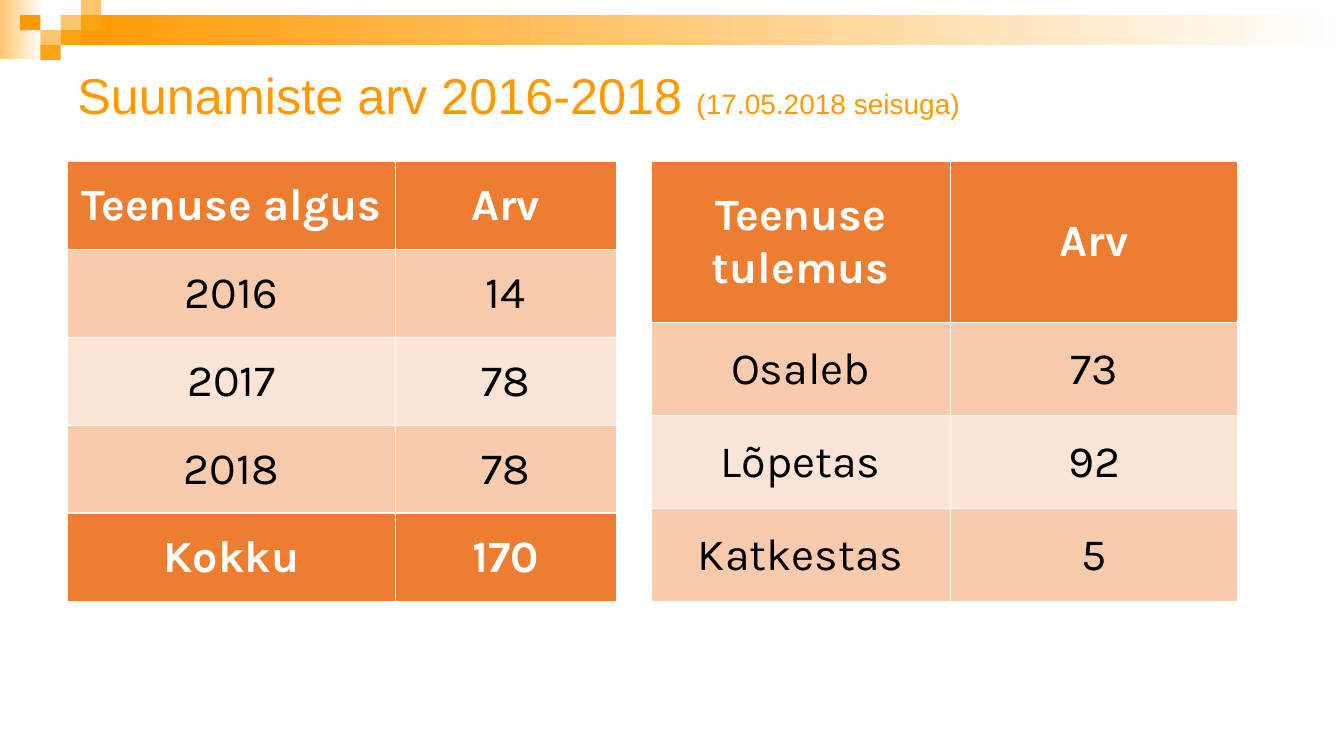
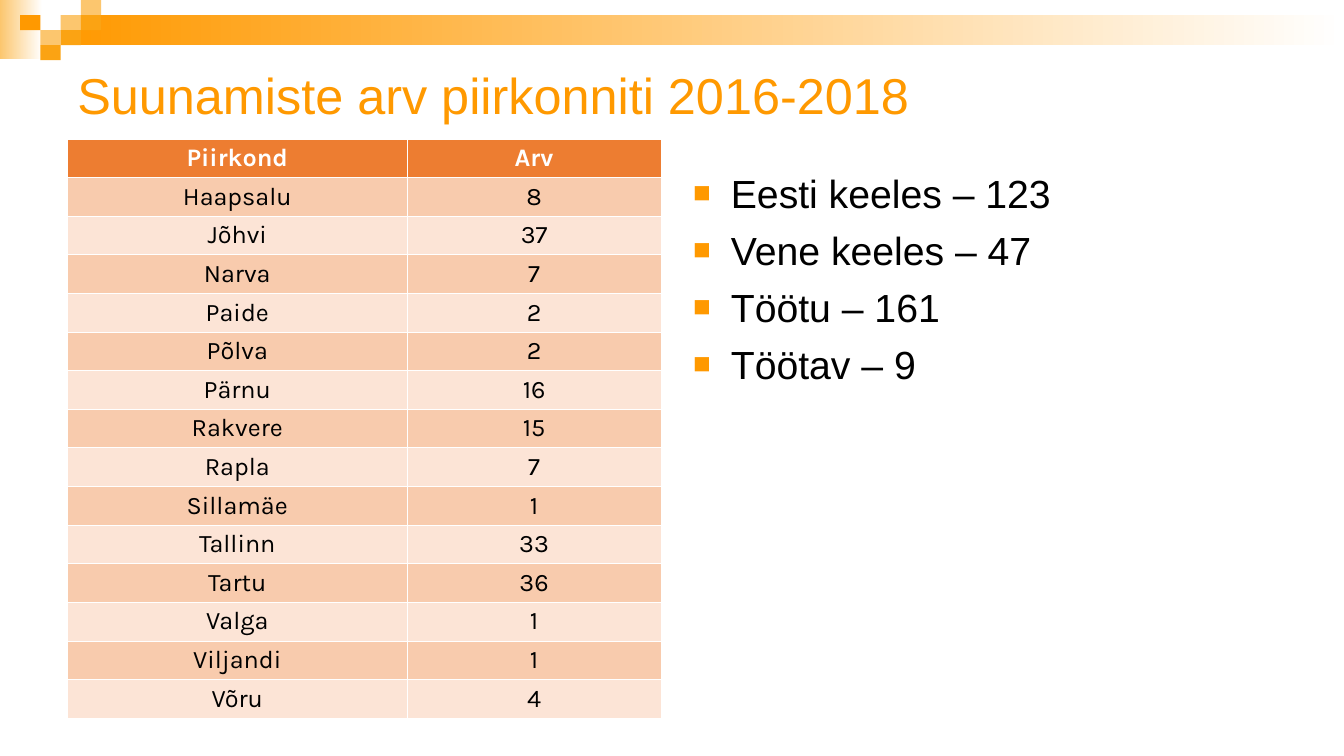
from dataclasses import dataclass

from lxml.etree import SubElement
from pptx import Presentation
from pptx.dml.color import RGBColor
from pptx.enum.shapes import MSO_SHAPE as Preset
from pptx.enum.text import MSO_ANCHOR as Anchor, PP_ALIGN as Align
from pptx.oxml.ns import qn
from pptx.shapes.autoshape import Shape
from pptx.slide import Slide
from pptx.table import _Cell as Cell
from pptx.text.text import TextFrame, _Paragraph as Paragraph
from pptx.util import Cm, Pt

# Colours and fonts
ORANGE = RGBColor(0xFF, 0x99, 0x00)
MID_ORANGE = RGBColor(0xFB, 0xA3, 0x13)
LIGHT_ORANGE = RGBColor(0xFC, 0xC6, 0x6E)
HEADER_FILL = RGBColor(0xED, 0x7D, 0x31)
ROW_FILLS = (RGBColor(0xF8, 0xCB, 0xAD), RGBColor(0xFC, 0xE4, 0xD6))
WHITE = RGBColor(0xFF, 0xFF, 0xFF)
BLACK = RGBColor(0x00, 0x00, 0x00)
TEXT_FONT = "Arial"
TABLE_FONT = "Karla"

# Shared measures, in centimetres
LEFT_MARGIN = 1.7
SQUARE_WIDTH, SQUARE_HEIGHT = 0.51, 0.38


@dataclass(frozen=True)
class Square:
    column: int
    row: int
    colour: RGBColor


@dataclass(frozen=True)
class TableSpec:
    left: float
    top: float
    height: float
    column_widths: tuple[float, ...]
    rows: tuple[tuple[str, str], ...]
    size: float
    header_height: float | None = None
    has_total: bool = False


SQUARES = (
    Square(3, 1, LIGHT_ORANGE),
    Square(4, 0, LIGHT_ORANGE),
    Square(4, 1, MID_ORANGE),
    Square(2, 2, LIGHT_ORANGE),
    Square(1, 1, ORANGE),
    Square(3, 2, MID_ORANGE),
    Square(2, 3, MID_ORANGE),
)

# Slide content
RESULTS = TableSpec(
    16.41, 4.06, 11.1, (7.54, 7.24),
    (("Teenuse tulemus", "Arv"), ("Osaleb", "73"), ("Lõpetas", "92"), ("Katkestas", "5")),
    size=32, header_height=4.07,
)
STARTS = TableSpec(
    LEFT_MARGIN, 4.06, 11.1, (8.26, 5.57),
    (("Teenuse algus", "Arv"), ("2016", "14"), ("2017", "78"), ("2018", "78"), ("Kokku", "170")),
    size=32, has_total=True,
)
REGIONS = TableSpec(
    LEFT_MARGIN, 3.5, 14.6, (8.56, 6.4),
    (
        ("Piirkond", "Arv"), ("Haapsalu", "8"), ("Jõhvi", "37"), ("Narva", "7"),
        ("Paide", "2"), ("Põlva", "2"), ("Pärnu", "16"), ("Rakvere", "15"),
        ("Rapla", "7"), ("Sillamäe", "1"), ("Tallinn", "33"), ("Tartu", "36"),
        ("Valga", "1"), ("Viljandi", "1"), ("Võru", "4"),
    ),
    size=18,
)
LANGUAGE_AND_WORK = (
    "Eesti keeles – 123", "Vene keeles – 47", "Töötu – 161", "Töötav – 9",
)


def add_text(paragraph: Paragraph, text: str, *, size: float, colour: RGBColor,
             font: str = TEXT_FONT, bold: bool = False) -> None:
    run = paragraph.add_run()
    run.text = text
    run.font.size = Pt(size)
    run.font.name = font
    run.font.bold = bold
    run.font.color.rgb = colour


def add_text_box(slide: Slide, left: float, top: float, width: float, height: float,
                 anchor: Anchor = Anchor.TOP) -> TextFrame:
    box = slide.shapes.add_textbox(Cm(left), Cm(top), Cm(width), Cm(height))
    frame = box.text_frame
    frame.word_wrap = True
    frame.vertical_anchor = anchor
    return frame


# Header decoration and title
def add_rectangle(slide: Slide, left: float, top: float, width: float, height: float) -> Shape:
    shape = slide.shapes.add_shape(Preset.RECTANGLE, Cm(left), Cm(top), Cm(width), Cm(height))
    shape.shadow.inherit = False
    shape.line.fill.background()
    return shape


def add_fading_band(slide: Slide, left: float, top: float, width: float, height: float,
                    colour: RGBColor) -> None:
    fill = add_rectangle(slide, left, top, width, height).fill
    fill.gradient()
    fill.gradient_angle = 0
    for stop, stop_colour in zip(fill.gradient_stops, (colour, WHITE)):
        stop.color.rgb = stop_colour


def add_header(slide: Slide) -> None:
    add_fading_band(slide, 0, 0, 1.07, 1.48, LIGHT_ORANGE)
    add_fading_band(slide, 1.53, 0.38, 32.34, 0.76, ORANGE)
    for square in SQUARES:
        shape = add_rectangle(slide, square.column * SQUARE_WIDTH, square.row * SQUARE_HEIGHT,
                              SQUARE_WIDTH, SQUARE_HEIGHT)
        shape.fill.solid()
        shape.fill.fore_color.rgb = square.colour


def add_title(slide: Slide, title: str, note: str = "") -> None:
    frame = add_text_box(slide, LEFT_MARGIN, 1.27, 30.48, 2.24, Anchor.MIDDLE)
    paragraph = frame.paragraphs[0]
    add_text(paragraph, title, size=36, colour=ORANGE)
    if note:
        add_text(paragraph, note, size=20, colour=ORANGE)


# Tables
def set_borders(cell: Cell, top: float, bottom: float) -> None:
    properties = cell._tc.get_or_add_tcPr()
    for side, width in (("L", 0.5), ("R", 0.5), ("T", top), ("B", bottom)):
        line = SubElement(properties, qn(f"a:ln{side}"), w=str(Pt(width)))
        fill = SubElement(line, qn("a:solidFill"))
        SubElement(fill, qn("a:srgbClr"), val=str(WHITE))


def add_data_table(slide: Slide, spec: TableSpec) -> None:
    count = len(spec.rows)
    last = count - 1
    header_height = spec.header_height or spec.height / count
    row_height = (spec.height - header_height) / last
    table = slide.shapes.add_table(
        count, len(spec.column_widths), Cm(spec.left), Cm(spec.top),
        Cm(sum(spec.column_widths)), Cm(spec.height),
    ).table
    table.first_row = table.horz_banding = False
    for column, width in zip(table.columns, spec.column_widths):
        column.width = Cm(width)
    for index, values in enumerate(spec.rows):
        table.rows[index].height = Cm(row_height if index else header_height)
        strong = index == 0 or (spec.has_total and index == last)
        top = 1.5 if spec.has_total and index == last else 0.5
        bottom = 1.5 if spec.has_total and index == last - 1 else 0.5
        for cell, text in zip(table.rows[index].cells, values):
            cell.margin_left = cell.margin_right = cell.margin_top = cell.margin_bottom = 0
            cell.vertical_anchor = Anchor.MIDDLE
            set_borders(cell, top, bottom)
            cell.fill.solid()
            cell.fill.fore_color.rgb = HEADER_FILL if strong else ROW_FILLS[(index - 1) % 2]
            paragraph = cell.text_frame.paragraphs[0]
            paragraph.alignment = Align.CENTER
            add_text(paragraph, text, size=spec.size, font=TABLE_FONT, bold=strong,
                     colour=WHITE if strong else BLACK)


# Bulleted list
def add_bullet(paragraph: Paragraph) -> None:
    properties = paragraph._p.get_or_add_pPr()
    properties.set("marL", str(Cm(0.95)))
    properties.set("indent", str(-Cm(0.95)))
    colour = SubElement(properties, qn("a:buClr"))
    SubElement(colour, qn("a:srgbClr"), val=str(ORANGE))
    SubElement(properties, qn("a:buSzPct"), val="75000")
    SubElement(properties, qn("a:buFont"), typeface=TEXT_FONT)
    SubElement(properties, qn("a:buChar"), char="■")


def add_bullet_list(slide: Slide, items: tuple[str, ...]) -> None:
    frame = add_text_box(slide, 17.22, 4.14, 14.96, 12.24)
    for index, item in enumerate(items):
        paragraph = frame.add_paragraph() if index else frame.paragraphs[0]
        add_bullet(paragraph)
        if index:
            paragraph.space_before = Pt(7)
        add_text(paragraph, item, size=28, colour=BLACK)


def add_slide(presentation: Presentation, title: str, note: str = "") -> Slide:
    slide = presentation.slides.add_slide(presentation.slide_layouts[6])
    add_header(slide)
    add_title(slide, title, note)
    return slide


def main() -> None:
    presentation = Presentation()
    presentation.slide_width = Cm(33.87)
    presentation.slide_height = Cm(19.05)

    # Referrals by year and by result
    slide = add_slide(presentation, "Suunamiste arv 2016-2018 ", "(17.05.2018 seisuga)")
    for spec in (RESULTS, STARTS):
        add_data_table(slide, spec)

    # Referrals by region
    slide = add_slide(presentation, "Suunamiste arv piirkonniti 2016-2018")
    add_data_table(slide, REGIONS)
    add_bullet_list(slide, LANGUAGE_AND_WORK)

    presentation.save("out.pptx")


if __name__ == "__main__":
    main()
